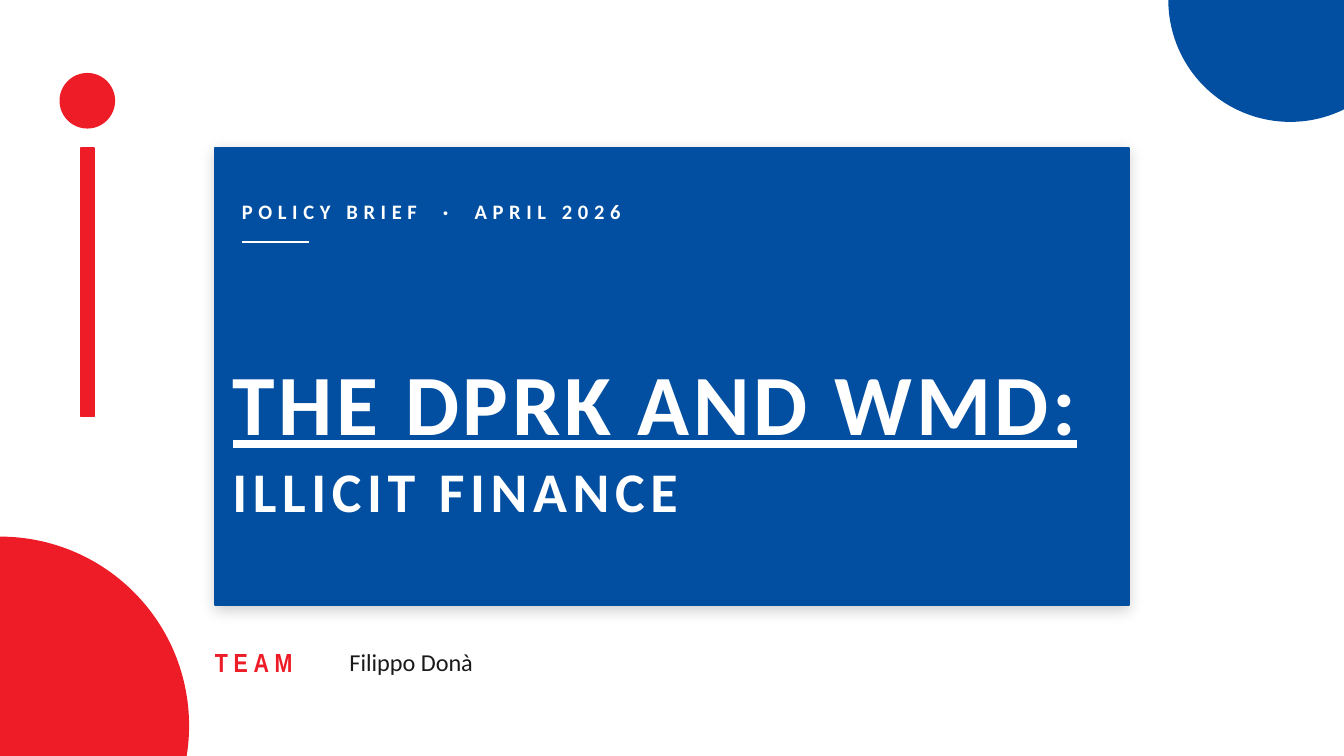
from lxml import etree
from pptx import Presentation
from pptx.dml.color import RGBColor
from pptx.enum.shapes import MSO_CONNECTOR, MSO_SHAPE
from pptx.enum.text import MSO_ANCHOR, MSO_AUTO_SIZE, PP_ALIGN
from pptx.oxml.ns import qn
from pptx.util import Pt

OVAL, RECTANGLE = MSO_SHAPE.OVAL, MSO_SHAPE.RECTANGLE
STRAIGHT = MSO_CONNECTOR.STRAIGHT
TOP, MIDDLE = MSO_ANCHOR.TOP, MSO_ANCHOR.MIDDLE
LEFT = PP_ALIGN.LEFT
NO_AUTOFIT = MSO_AUTO_SIZE.NONE

EMU_PER_PX = 4572  # 200 px to the inch
SLIDE_SIZE = (2000, 1125)
TITLE_ONLY = 5

RED, BLUE, WHITE, INK = "ED1C27", "024FA2", "FFFFFF", "1A1A1A"
BODY_FONT, LABEL_FONT = "Calibri", "Arial Narrow"


def emu(*lengths):
    return [length * EMU_PER_PX for length in lengths]


def rgb(color):
    return RGBColor.from_string(color)


class CoverSlide:
    """Holds the slide and draws each kind of element in its style."""

    def __init__(self, presentation):
        self.slide = presentation.slides.add_slide(presentation.slide_layouts[TITLE_ONLY])
        self.shapes = self.slide.shapes
        self.slide.background.fill.solid()
        self.slide.background.fill.fore_color.rgb = rgb(WHITE)

    def block(self, kind, box, color):
        shape = self.shapes.add_shape(kind, *emu(*box))
        shape.shadow.inherit = False
        shape.fill.solid()
        shape.fill.fore_color.rgb = rgb(color)
        shape.line.color.rgb = rgb(color)
        shape.line.width = Pt(1)
        return shape

    def panel(self, box, color):
        """Draw a rectangle with a soft shadow below it."""
        shape = self.block(RECTANGLE, box, color)
        effects = shape.element.spPr.find(qn("a:effectLst"))
        shadow = etree.SubElement(effects, qn("a:outerShdw"), blurRad=str(Pt(8)),
                                  dist=str(Pt(2)), dir="5400000", algn="bl", rotWithShape="0")
        shade = etree.SubElement(shadow, qn("a:srgbClr"), val="000000")
        etree.SubElement(shade, qn("a:alpha"), val="18000")

    def rule(self, start, end, color, width):
        line = self.shapes.add_connector(STRAIGHT, *emu(*start, *end))
        line.line.color.rgb = rgb(color)
        line.line.width = Pt(width)
        etree.SubElement(line.element.spPr, qn("a:effectLst"))

    def text(self, box, words, size, color=WHITE, **style):
        self.fill_text(self.shapes.add_textbox(*emu(*box)), words, size, color, **style)

    def title(self, box, words, size, **style):
        """Place the title above the shapes drawn so far."""
        title = self.shapes.title
        title.left, title.top, title.width, title.height = emu(*box)
        title.element.getparent().append(title.element)
        self.fill_text(title, words, size, WHITE, **style)

    def fill_text(self, shape, words, size, color, font=BODY_FONT, bold=True,
                  underline=False, spacing=0, anchor=TOP):
        """Fill a shape with one paragraph; spacing is in points between letters."""
        frame = shape.text_frame
        frame.word_wrap = True
        frame.auto_size = NO_AUTOFIT
        frame.vertical_anchor = anchor
        frame.margin_left = frame.margin_top = frame.margin_right = frame.margin_bottom = 0
        paragraph = frame.paragraphs[0]
        paragraph.text = words
        paragraph.alignment = LEFT
        paragraph.font.name = font
        paragraph.font.size = Pt(size)
        paragraph.font.bold = bold
        paragraph.font.underline = underline
        paragraph.font.color.rgb = rgb(color)
        for properties in shape.element.iter(qn("a:defRPr")):
            properties.set("spc", str(spacing * 100))


def main():
    presentation = Presentation()
    presentation.slide_width, presentation.slide_height = emu(*SLIDE_SIZE)
    cover = CoverSlide(presentation)

    cover.block(OVAL, (-280, 800, 560, 560), RED)
    cover.block(OVAL, (1740, -180, 360, 360), BLUE)
    cover.block(OVAL, (90, 110, 80, 80), RED)
    cover.block(RECTANGLE, (120, 220, 20, 400), RED)
    cover.panel((320, 220, 1360, 680), BLUE)

    cover.text((360, 280, 1280, 70), "POLICY BRIEF  ·  APRIL 2026", 11, spacing=3, anchor=MIDDLE)
    cover.rule((360, 360), (460, 360), WHITE, 1.5)
    cover.title((346, 520, 1280, 130), "THE DPRK AND WMD:", 46, underline=True, spacing=2)
    cover.text((346, 680, 1280, 190), "ILLICIT FINANCE", 30, spacing=3)

    cover.text((320, 950, 240, 70), "TEAM", 14, RED, font=LABEL_FONT, spacing=3, anchor=MIDDLE)
    cover.text((520, 950, 1280, 70), "Filippo Donà", 13, INK, bold=False, anchor=MIDDLE)

    presentation.save("out.pptx")


if __name__ == "__main__":
    main()
